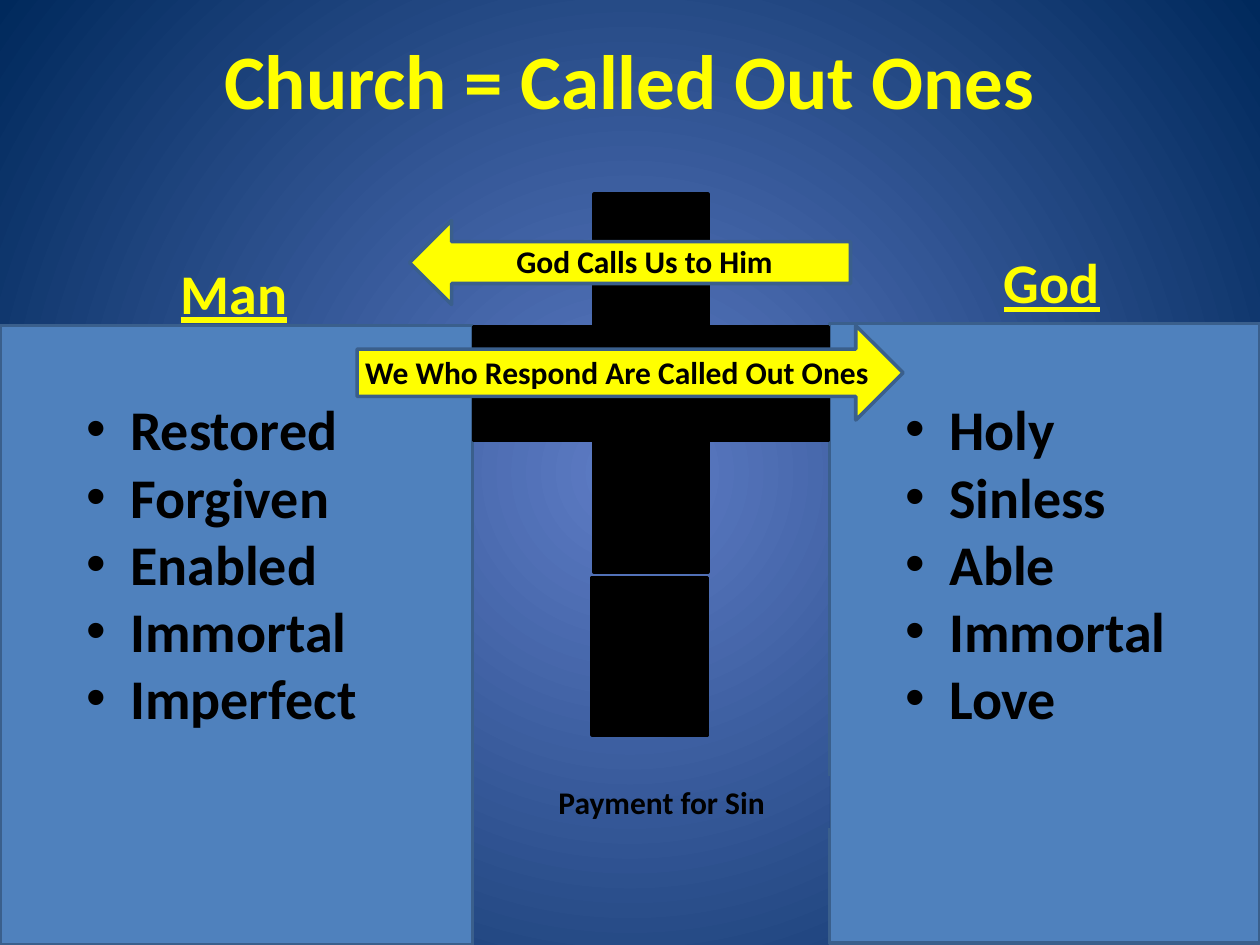
from dataclasses import dataclass

from lxml.etree import SubElement
from pptx import Presentation
from pptx.dml.color import RGBColor
from pptx.enum.shapes import MSO_SHAPE as Preset
from pptx.enum.text import MSO_ANCHOR as Anchor, MSO_AUTO_SIZE as AutoSize, PP_ALIGN as Align
from pptx.oxml.ns import qn
from pptx.util import Inches, Pt

COLUMNS, ROWS = 120, 90
YELLOW, BLACK, BLUE, EDGE = "FFFF00", "000000", "4F81BD", "3A5F8C"
GLOW, NAVY = "5E7CC5", "00295C"


@dataclass
class Area:
    """Left, top, width and height in grid columns and rows."""
    column: float
    row: float
    columns: float
    rows: float


@dataclass
class Block:
    area: Area
    preset: Preset
    fill: str
    line: str
    rotation: float = 0


@dataclass
class Side:
    heading: str
    heading_area: Area
    items: list[str]
    list_area: Area


PANELS = [
    Block(Area(0, 31, 45, 59), Preset.RECTANGLE, BLUE, EDGE),
    Block(Area(79, 30.8, 41, 59), Preset.RECTANGLE, BLUE, EDGE),
]
CROSS = [
    Block(Area(39, 12, 46, 49), Preset.MATH_PLUS, BLACK, BLACK),
    Block(Area(56.4, 55, 11, 15), Preset.RECTANGLE, BLACK, BLACK),
]
ARROWS = [
    (Block(Area(39, 21, 42, 8), Preset.RIGHT_ARROW, YELLOW, EDGE, 180),
     "God Calls Us to Him", Area(48, 22.5, 36, 4.8)),
    (Block(Area(34, 31, 52, 9), Preset.RIGHT_ARROW, YELLOW, EDGE),
     "We Who Respond Are Called Out Ones", Area(33.6, 33, 53.4, 4.8)),
]
SIDES = [
    Side("Man", Area(16, 24, 12.7, 7.7),
         ["Restored", "Forgiven", "Enabled", "Immortal", "Imperfect"],
         Area(7, 37, 33, 33.5)),
    Side("God", Area(94.4, 23, 11.7, 7.7),
         ["Holy", "Sinless", "Able", "Immortal", "Love"],
         Area(85, 37, 30, 33.5)),
]

deck = Presentation()
deck.slide_width, deck.slide_height = Inches(10), Inches(7.5)
page = deck.slides.add_slide(deck.slide_layouts.get_by_name("Comparison"))


def color(value: str) -> RGBColor:
    return RGBColor.from_string(value)


def bounds(area: Area) -> tuple[int, int, int, int]:
    across, down = deck.slide_width / COLUMNS, deck.slide_height / ROWS
    return (round(area.column * across), round(area.row * down),
            round(area.columns * across), round(area.rows * down))


def draw_block(block: Block) -> None:
    shape = page.shapes.add_shape(block.preset, *bounds(block.area))
    shape.shadow.inherit = False
    shape.fill.solid()
    shape.fill.fore_color.rgb = color(block.fill)
    shape.line.color.rgb = color(block.line)
    shape.line.width = Pt(2)
    shape.rotation = block.rotation


def write(box, lines: list[str], size: float, ink: str, align=Align.LEFT,
          anchor=Anchor.TOP, underline=False, bullets=False) -> None:
    frame = box.text_frame
    frame.word_wrap = True
    frame.auto_size = AutoSize.NONE
    frame.vertical_anchor = anchor
    for index, line in enumerate(lines):
        para = frame.add_paragraph() if index else frame.paragraphs[0]
        para.alignment = align
        para.space_before = Pt(0)
        span = para.add_run()
        span.text = line
        font = span.font
        font.name, font.size, font.bold, font.underline = "Calibri", Pt(size), True, underline
        font.color.rgb = color(ink)
        settings = para._p.get_or_add_pPr()
        indent = Inches(0.35) if bullets else 0
        settings.set("marL", str(indent))
        settings.set("indent", str(-indent))
        if bullets:
            SubElement(settings, qn("a:buFont"), typeface="Arial")
            SubElement(settings, qn("a:buChar"), char="•")
        else:
            SubElement(settings, qn("a:buNone"))


def place(holder, area: Area):
    """Move a placeholder and bring it in front of what is already drawn."""
    holder.left, holder.top, holder.width, holder.height = bounds(area)
    holder.element.getparent().append(holder.element)
    return holder


# Background: radial glow
background = page.background.fill
background.gradient()
for stop, shade in zip(background.gradient_stops, (GLOW, NAVY)):
    stop.color.rgb = color(shade)
gradient = page.element.find(".//" + qn("a:gradFill"))
gradient.remove(gradient.find(qn("a:lin")))
circle = SubElement(gradient, qn("a:path"), path="circle")
SubElement(circle, qn("a:fillToRect"), l="50000", t="50000", r="50000", b="50000")

# Two cliffs and the cross between them
for block in PANELS + CROSS:
    draw_block(block)

# Title, headings and lists
title, *bodies = list(page.placeholders)
write(place(title, Area(6, 0, 108, 15)), ["Church = Called Out Ones"], 44, YELLOW,
      Align.CENTER, Anchor.MIDDLE)
for side, heading, body in zip(SIDES, bodies[::2], bodies[1::2]):
    write(place(heading, side.heading_area), [side.heading], 32, YELLOW, underline=True)
    heading.text_frame.word_wrap = False
    write(place(body, side.list_area), side.items, 32, BLACK, bullets=True)

# Caption under the cross, filled with the slide background
caption = page.shapes.add_shape(Preset.RECTANGLE, *bounds(Area(52, 74, 27, 4.8)))
caption.shadow.inherit = False
caption.line.fill.background()
caption.element.set("useBgFill", "1")
write(caption, ["Payment for Sin"], 18, BLACK)

# Arrows with their labels
for arrow, label, label_area in ARROWS:
    draw_block(arrow)
    write(page.shapes.add_textbox(*bounds(label_area)), [label], 18, BLACK)

deck.save("out.pptx")
